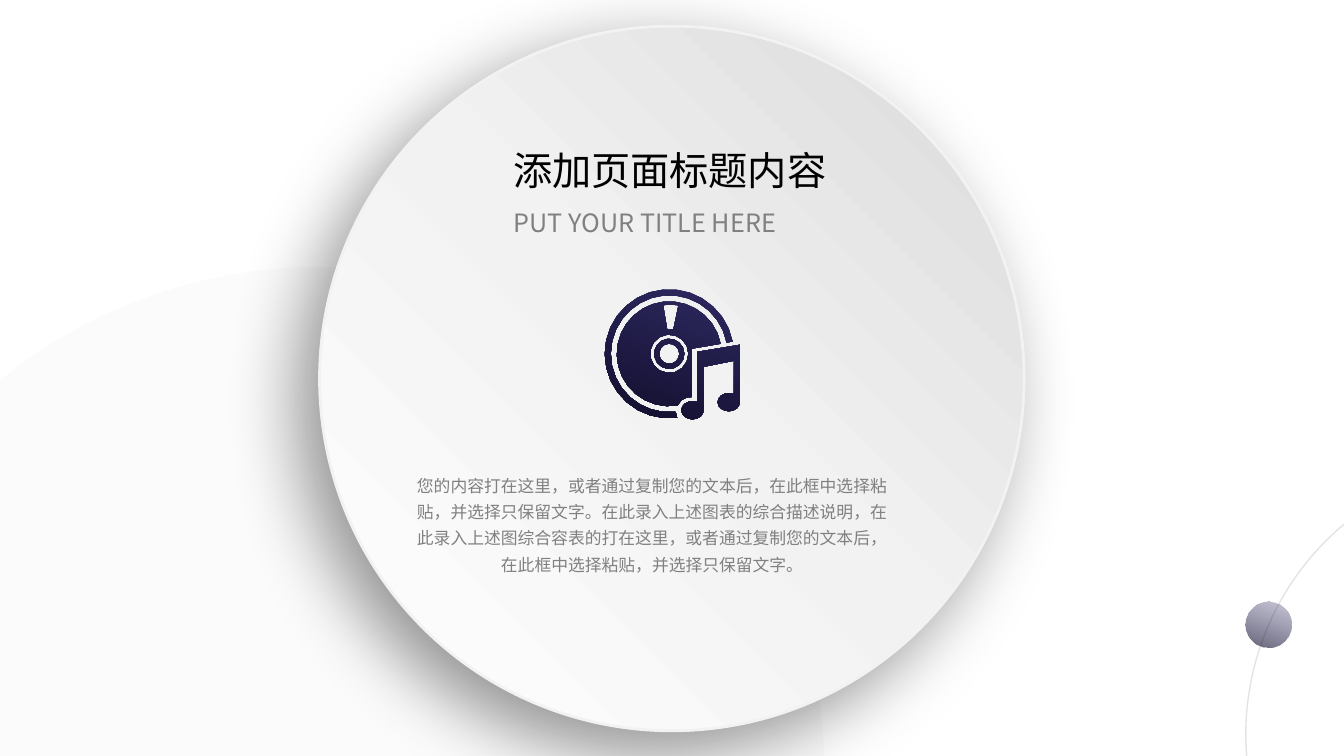
from math import cos, sin, radians
from lxml import etree
from pptx import Presentation
from pptx.dml.color import RGBColor as RGB
from pptx.enum.shapes import MSO_SHAPE as Kind
from pptx.enum.text import MSO_ANCHOR as Anchor, PP_ALIGN as Align
from pptx.oxml import parse_xml
from pptx.oxml.ns import qn
from pptx.util import Inches, Pt

TITLE = "添加页面标题内容"
SUB = "PUT YOUR TITLE HERE"
BODY = (
    "您的内容打在这里，或者通过复制您的文本后，在此框中选择粘贴，并选择只保留文字。"
    "在此录入上述图表的综合描述说明，在此录入上述图综合容表的打在这里，"
    "或者通过复制您的文本后，在此框中选择粘贴，并选择只保留文字。"
)
FONT = "Noto Sans CJK SC"
INK = {"black": "000000", "gray": "808080", "rule": "A6A6A6", "white": "FFFFFF",
       "pale": "F2F2F2", "shade": "D9D9D9", "navy": "2E2961", "night": "120F2D"}
NS = 'xmlns:a="http://schemas.openxmlformats.org/drawingml/2006/main"'

# Gradient stops: position, colour, opacity in percent
GLASS = [(0, "navy", 26), (100, "night", 65)]
NAVY = [(0, "navy", 100), (100, "night", 100)]
PLATE = [(0, "white", 100), (51, "pale", 100), (100, "shade", 100)]

# Circles: left, top, size, fill stops, angle, line (colour, points, opacity)
DISCS = [
    (12.36, 4.57, 5.43, [], 0, ("rule", 1, 30)),
    (12.36, 5.97, 0.45, GLASS, 110, None),
    (-1.85, 2.65, 10.03, [(0, "pale", 29)], 0, None),
    (3.17, 0.26, 6.99, PLATE, 315, ("pale", 2, 100)),
]


def fade(color, pct):
    if pct < 100:
        etree.SubElement(color, qn("a:alpha"), val=str(pct * 1000))


def paint(shape, stops, angle=0, line=None):
    shape.shadow.inherit = False
    shape.fill.background()
    if len(stops) == 1:
        shape.fill.solid()
        shape.fill.fore_color.rgb = RGB.from_string(INK[stops[0][1]])
        fade(shape.element.spPr.find(".//" + qn("a:srgbClr")), stops[0][2])
    elif stops:
        marks = "".join(
            f'<a:gs pos="{pos * 1000}"><a:srgbClr val="{INK[tone]}">'
            f'<a:alpha val="{pct * 1000}"/></a:srgbClr></a:gs>'
            for pos, tone, pct in stops)
        spot = shape.element.spPr.find(qn("a:noFill"))
        spot.getparent().replace(spot, parse_xml(
            f'<a:gradFill {NS} rotWithShape="1"><a:gsLst>{marks}</a:gsLst>'
            f'<a:lin ang="{angle * 60000}" scaled="0"/></a:gradFill>'))
    if line:
        tone, width, pct = line
        shape.line.color.rgb = RGB.from_string(INK[tone])
        shape.line.width = Pt(width)
        fade(shape.element.spPr.find(f"{qn('a:ln')}//{qn('a:srgbClr')}"), pct)
    else:
        shape.line.fill.background()


def write(shape, text, box, size, color, align=Align.LEFT, gap=1.0, wrap=True):
    shape.left, shape.top, shape.width, shape.height = map(Inches, box)
    frame = shape.text_frame
    frame.word_wrap = wrap
    frame.vertical_anchor = Anchor.TOP
    para = frame.paragraphs[0]
    para.alignment, para.line_spacing = align, gap
    run = para.add_run()
    run.text = text
    font = run.font
    font.size, font.name = Pt(size), FONT
    font.color.rgb = RGB.from_string(INK[color])
    etree.SubElement(font._element, qn("a:ea"), typeface=FONT)


def arc(x, y, rx, ry, start, end):
    step = 12 if rx > 0.5 else 24
    count = round(abs(end - start) / step)
    turns = [radians(start + (end - start) * i / count) for i in range(count + 1)]
    return [(x + rx * cos(t), y + ry * sin(t)) for t in turns]


def ring(r, start=0, end=360):
    return arc(6.64, 3.51, r, r, start, end)


def hole(r):
    return ring(r)[:-1]


# Outlines of the record and the note
ICON = [
    [(6.86, 3.94), (6.86, 3.46)] + ring(0.52, -11, -279) + [(6.76, 3.97), (6.82, 3.94)],
    [(6.73, 3.03), (6.68, 3.27), (6.62, 3.27), (6.58, 3.03), (6.64, 3.02)],
    hole(0.19), hole(0.15), hole(0.1),
    ring(0.64, 83, 349) + ring(0.58, 349, 84) + [(6.71, 4.11)],
    [(7.34, 3.42)] + arc(7.23, 3.99, 0.11, 0.09, -7, 297)
    + [(7.28, 3.58), (6.98, 3.64)] + arc(6.87, 4.07, 0.11, 0.09, -7, 297)
    + [(6.92, 3.49)],
]

deck = Presentation()
deck.slide_width, deck.slide_height = Inches(40 / 3), Inches(7.5)
slide = deck.slides.add_slide(deck.slide_layouts[5])
shapes = slide.shapes

# Circles
for left, top, size, stops, angle, line in DISCS:
    disc = shapes.add_shape(Kind.OVAL, *map(Inches, (left, top, size, size)))
    paint(disc, stops, angle, line)

# Soft shadow under the plate, the last circle
disc.element.spPr.find(qn("a:effectLst")).append(parse_xml(
    f'<a:outerShdw {NS} blurRad="{Pt(53)}" dist="{Pt(21)}" dir="{135 * 60000}" '
    f'algn="tr" rotWithShape="0"><a:srgbClr val="{INK["black"]}">'
    '<a:alpha val="41000"/></a:srgbClr></a:outerShdw>'))

# Music icon, drawn in thousandths of an inch
paths = [[(round(x * 1000), round(y * 1000)) for x, y in path] for path in ICON]
pen = shapes.build_freeform(*paths[0][0], scale=Inches(1) / 1000)
for i, path in enumerate(paths):
    if i:
        pen.move_to(*path[0])
    pen.add_line_segments(path[1:], close=True)
paint(pen.convert_to_shape(), NAVY, 110)

# Texts, with the title brought to the front
title = shapes.title
title.element.getparent().append(title.element)
write(title, TITLE, (4.99, 1.4, 3.34, 0.57), 28, "black", wrap=False)
for text, box, size, align, gap in [
    (SUB, (5, 2.01, 3.33, 0.4), 18, Align.JUSTIFY, 1.0),
    (BODY, (4.03, 4.61, 4.88, 1.15), 12, Align.CENTER, 1.3),
]:
    label = shapes.add_textbox(*map(Inches, box))
    write(label, text, box, size, "gray", align, gap)

deck.save("out.pptx")
